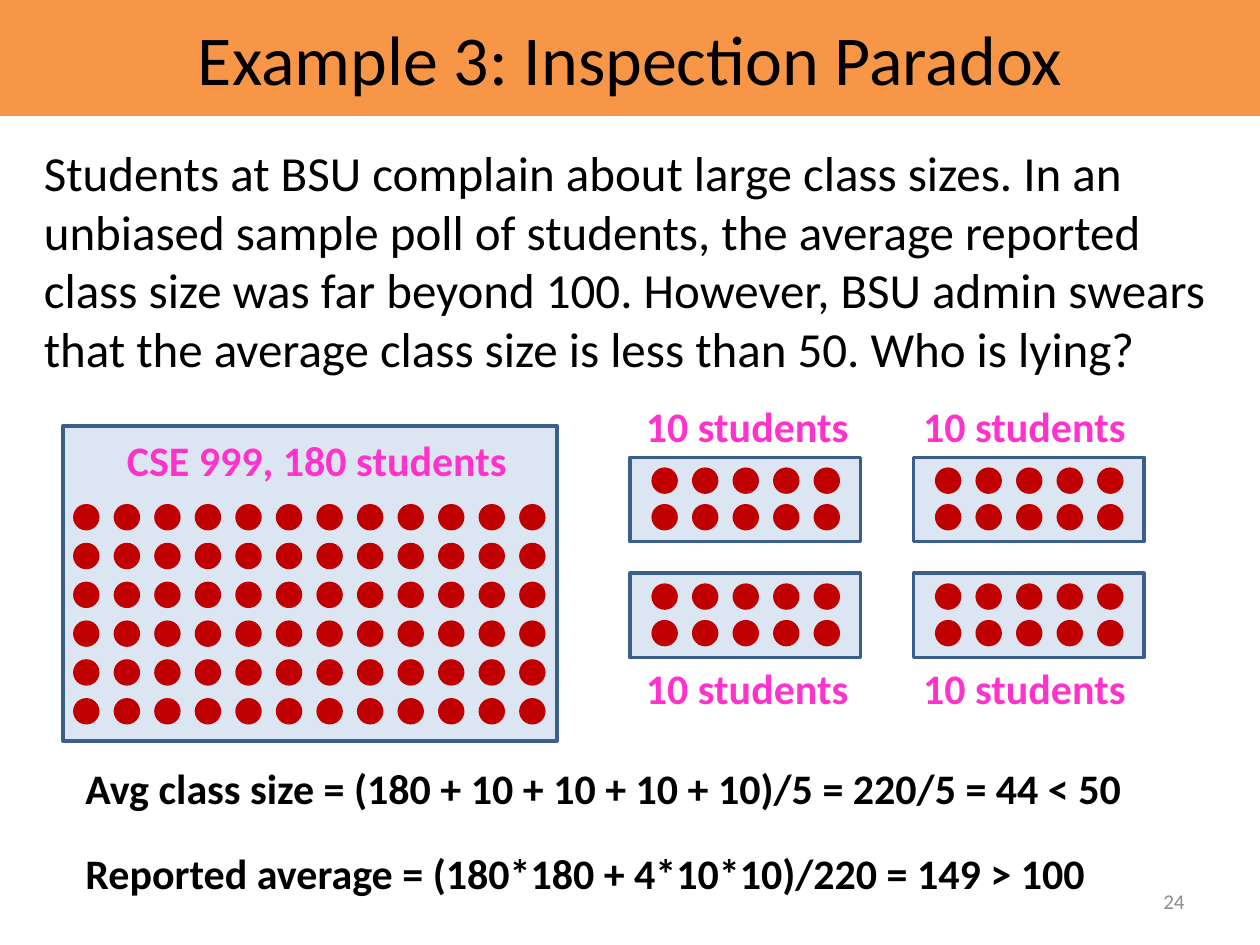
from dataclasses import dataclass

from pptx import Presentation
from pptx.dml.color import RGBColor
from pptx.enum.shapes import MSO_SHAPE
from pptx.enum.text import MSO_ANCHOR, MSO_AUTO_SIZE, PP_ALIGN
from pptx.util import Inches, Pt

FONT = "Calibri"
BLACK, GREY, PINK = "000000", "8C8C8C", "FF33CC"
ORANGE, PALE_BLUE, BLUE, RED = "F79646", "DCE6F2", "3A5F8C", "C00000"
DOT_SIZE = 0.21
COLUMN_STEP = 3.54 / 11


@dataclass
class Classroom:
    left: float
    top: float
    width: float
    height: float
    columns: int
    rows: int
    dot_left: float  # offset of the first dot from the room's corner
    dot_top: float
    row_step: float


def color(value: str) -> RGBColor:
    return RGBColor.from_string(value)


def place(box, left: float, top: float, width: float, height: float) -> None:
    box.left, box.top = Inches(left), Inches(top)
    box.width, box.height = Inches(width), Inches(height)


def write(box, text: str, *, size: float, ink: str = BLACK, bold: bool = False,
          align=PP_ALIGN.LEFT, anchor=MSO_ANCHOR.TOP,
          before: float = 0, after: float = 0) -> None:
    """Fill a shape or text box with one formatted paragraph."""
    frame = box.text_frame
    frame.word_wrap = True
    frame.auto_size = MSO_AUTO_SIZE.NONE
    frame.vertical_anchor = anchor
    para = frame.paragraphs[0]
    para.alignment = align
    para.space_before, para.space_after = Pt(before), Pt(after)
    span = para.add_run()
    span.text = text
    span.font.name = FONT
    span.font.size = Pt(size)
    span.font.bold = bold
    span.font.color.rgb = color(ink)


def add_text(page, text: str, left: float, top: float, width: float,
             height: float, **style) -> None:
    box = page.shapes.add_textbox(Inches(left), Inches(top), Inches(width), Inches(height))
    write(box, text, **style)


def add_filled(shapes, kind, left: float, top: float, width: float, height: float,
               fill: str, outline: str | None = None) -> None:
    shape = shapes.add_shape(kind, Inches(left), Inches(top), Inches(width), Inches(height))
    shape.shadow.inherit = False
    shape.fill.solid()
    shape.fill.fore_color.rgb = color(fill)
    if outline:
        shape.line.color.rgb = color(outline)
        shape.line.width = Pt(2)
    else:
        shape.line.fill.background()


def add_classroom(page, room: Classroom) -> None:
    """Draw a room and its grid of students as one group."""
    shapes = page.shapes.add_group_shape().shapes
    add_filled(shapes, MSO_SHAPE.RECTANGLE, room.left, room.top,
               room.width, room.height, PALE_BLUE, BLUE)
    for row in range(room.rows):
        for column in range(room.columns):
            add_filled(shapes, MSO_SHAPE.OVAL,
                       room.left + room.dot_left + column * COLUMN_STEP,
                       room.top + room.dot_top + row * room.row_step,
                       DOT_SIZE, DOT_SIZE, RED)


def main() -> None:
    deck = Presentation()
    deck.slide_width, deck.slide_height = Inches(10), Inches(7.5)
    page = deck.slides.add_slide(deck.slide_layouts[5])

    title = page.shapes.title
    place(title, 0, 0, 10, 0.92)
    title.fill.solid()
    title.fill.fore_color.rgb = color(ORANGE)
    write(title, "Example 3: Inspection Paradox", size=40,
          align=PP_ALIGN.CENTER, anchor=MSO_ANCHOR.MIDDLE)

    add_text(page, "24", 7.17, 6.95, 2.33, 0.4, size=12, ink=GREY,
             align=PP_ALIGN.RIGHT, anchor=MSO_ANCHOR.MIDDLE)
    add_text(page, "Students at BSU complain about large class sizes. In an unbiased "
             "sample poll of students, the average reported class size was far beyond 100. "
             "However, BSU admin swears that the average class size is less than 50. "
             "Who is lying?", 0.25, 1.08, 9.5, 2.47, size=28, before=12, after=6)

    label = dict(size=24, ink=PINK, bold=True, align=PP_ALIGN.CENTER)
    add_classroom(page, Classroom(0.5, 3.38, 3.92, 2.5, columns=12, rows=6,
                                  dot_left=0.08, dot_top=0.62, row_step=1.54 / 5))
    add_text(page, "CSE 999, 180 students", 0.85, 3.4, 3.33, 0.5, **label)

    for room_left, label_left in ((5, 4.97), (7.25, 7.17)):
        for room_top, label_top in ((3.63, 3.13), (4.55, 5.21)):
            add_classroom(page, Classroom(room_left, room_top, 1.83, 0.67, columns=5, rows=2,
                                          dot_left=0.17, dot_top=0.08, row_step=0.29))
            add_text(page, "10 students", label_left, label_top, 1.92, 0.5, **label)

    results = (
        (6, "Avg class size = (180 + 10 + 10 + 10 + 10)/5 = 220/5 = 44 < 50"),
        (6.68, "Reported average = (180*180 + 4*10*10)/220 = 149 > 100"),
    )
    for top, text in results:
        add_text(page, text, 0.58, top, 8.67, 0.5, size=24, bold=True)

    deck.save("out.pptx")


if __name__ == "__main__":
    main()
